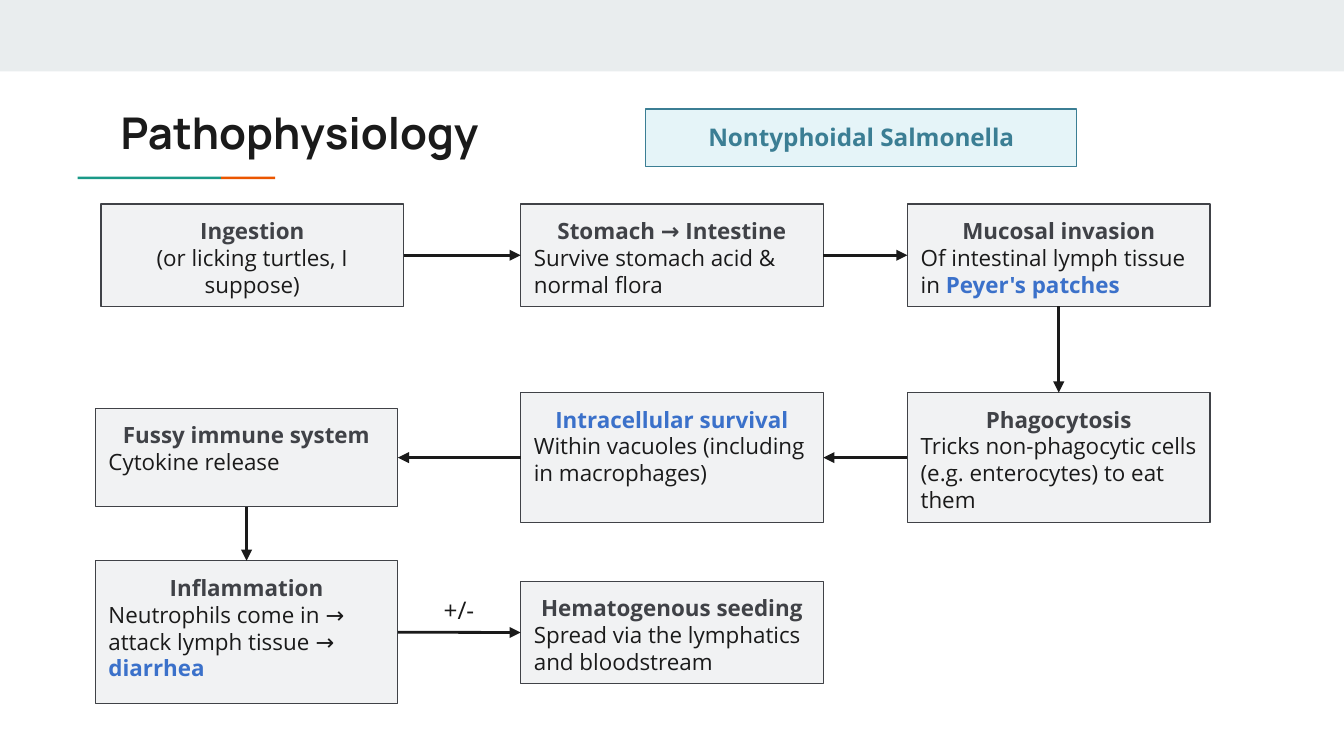
"""Build the Nontyphoidal Salmonella pathophysiology flowchart slide."""
from lxml.etree import SubElement
from pptx import Presentation
from pptx.dml.color import RGBColor as RGB
from pptx.enum.shapes import MSO_CONNECTOR as CONN, MSO_SHAPE as SHAPE
from pptx.enum.text import MSO_ANCHOR as ANCHOR, PP_ALIGN as ALIGN
from pptx.oxml.ns import qn
from pptx.util import Cm, Pt

COLORS = {
    "band": "E9EDEE", "teal": "1A9988", "orange": "EB5600", "ink": "1A1A1A",
    "head": "404247", "key": "3B71CA", "box": "F1F2F3",
    "tag": "E5F4F8", "tag_ink": "3B7E94",
}
BODY, DISPLAY = "Open Sans", "Manrope"
BOX_W = 5.72
TOP, LEFT, BOTTOM, RIGHT = range(4)

BARS = [
    ("band", 0, 0, 25.4, 1.35),
    ("teal", 1.47, 3.34, 2.71, 0.05),
    ("orange", 4.18, 3.34, 1.02, 0.05),
]

STEPS = {
    "ingestion": (1.91, 3.86, 1.93, "Ingestion", "head", ALIGN.CENTER,
                  [("(or licking turtles, I suppose)", "ink")]),
    "stomach": (9.84, 3.86, 1.93, "Stomach → Intestine", "head", ALIGN.LEFT,
                [("Survive stomach acid & normal flora", "ink")]),
    "invasion": (17.15, 3.86, 1.93, "Mucosal invasion", "head", ALIGN.LEFT,
                 [("Of intestinal lymph tissue in ", "ink"), ("Peyer's patches", "key")]),
    "phagocytosis": (17.15, 7.42, 2.46, "Phagocytosis", "head", ALIGN.LEFT,
                     [("Tricks non-phagocytic cells (e.g. enterocytes) to eat them", "ink")]),
    "survival": (9.84, 7.42, 2.46, "Intracellular survival", "key", ALIGN.LEFT,
                 [("Within vacuoles (including in macrophages)", "ink")]),
    "immune": (1.8, 7.72, 1.86, "Fussy immune system", "head", ALIGN.LEFT,
               [("Cytokine release", "ink")]),
    "inflammation": (1.8, 10.6, 2.7, "Inflammation", "head", ALIGN.LEFT,
                     [("Neutrophils come in → attack lymph tissue → ", "ink"),
                      ("diarrhea", "key")]),
    "seeding": (9.84, 10.99, 1.93, "Hematogenous seeding", "head", ALIGN.LEFT,
                [("Spread via the lymphatics and bloodstream", "ink")]),
}

ARROWS = [
    ("ingestion", RIGHT, "stomach", LEFT),
    ("stomach", RIGHT, "invasion", LEFT),
    ("invasion", BOTTOM, "phagocytosis", TOP),
    ("phagocytosis", LEFT, "survival", RIGHT),
    ("survival", LEFT, "immune", RIGHT),
    ("immune", BOTTOM, "inflammation", TOP),
    ("inflammation", RIGHT, "seeding", LEFT),
]


def color(name):
    return RGB.from_string(COLORS[name])


def add_rect(s, fill, x, y, w, h, line=None):
    sp = s.shapes.add_shape(SHAPE.RECTANGLE, Cm(x), Cm(y), Cm(w), Cm(h))
    sp.shadow.inherit = False
    sp.fill.solid()
    sp.fill.fore_color.rgb = color(fill)
    if line:
        sp.line.color.rgb = color(line)
        sp.line.width = Pt(0.75)
    else:
        sp.line.fill.background()
    return sp


def write(sp, paragraphs, size, font=BODY):
    tf = sp.text_frame
    tf.word_wrap = True
    tf.vertical_anchor = ANCHOR.TOP
    tf.margin_left = tf.margin_right = tf.margin_top = tf.margin_bottom = Cm(0.25)
    for i, (align, runs) in enumerate(paragraphs):
        p = tf.add_paragraph() if i else tf.paragraphs[0]
        p.alignment = align
        for text, ink, bold in runs:
            r = p.add_run()
            r.text = text
            r.font.name, r.font.size, r.font.bold = font, Pt(size), bold
            r.font.color.rgb = color(ink)


def add_step(s, x, y, h, heading, heading_ink, align, body):
    sp = add_rect(s, "box", x, y, BOX_W, h, "head")
    runs = [(text, ink, ink == "key") for text, ink in body]
    write(sp, [(ALIGN.CENTER, [(heading, heading_ink, True)]), (align, runs)], 12)
    return sp


def add_arrow(s, start, start_side, end, end_side):
    cx = s.shapes.add_connector(CONN.STRAIGHT, 0, 0, 0, 0)
    cx.begin_connect(start, start_side)
    cx.end_connect(end, end_side)
    cx.line.color.rgb = color("ink")
    cx.line.width = Pt(1.5)
    SubElement(cx.line._get_or_add_ln(), qn("a:tailEnd"), type="triangle")
    SubElement(cx._element.spPr, qn("a:effectLst"))


def add_label(s, x, y, w, h, align, text, size, font, bold):
    sp = s.shapes.add_textbox(Cm(x), Cm(y), Cm(w), Cm(h))
    write(sp, [(align, [(text, "ink", bold)])], size, font)


def main():
    prs = Presentation()
    prs.slide_width, prs.slide_height = Cm(25.4), Cm(14.29)
    s = prs.slides.add_slide(prs.slide_layouts[6])
    for bar in BARS:
        add_rect(s, *bar)
    add_label(s, 2.03, 1.75, 21.36, 1.5, ALIGN.LEFT, "Pathophysiology", 23.4, DISPLAY, True)
    tag = add_rect(s, "tag", 12.2, 2.06, 8.15, 1.09, "tag_ink")
    write(tag, [(ALIGN.CENTER, [("Nontyphoidal Salmonella", "tag_ink", True)])], 13)
    boxes = {name: add_step(s, *step) for name, step in STEPS.items()}
    for start, start_side, end, end_side in ARROWS:
        add_arrow(s, boxes[start], start_side, boxes[end], end_side)
    add_label(s, 7.52, 11, 2.31, 1.07, ALIGN.CENTER, "+/-", 13, BODY, False)
    prs.save("out.pptx")


if __name__ == "__main__":
    main()
